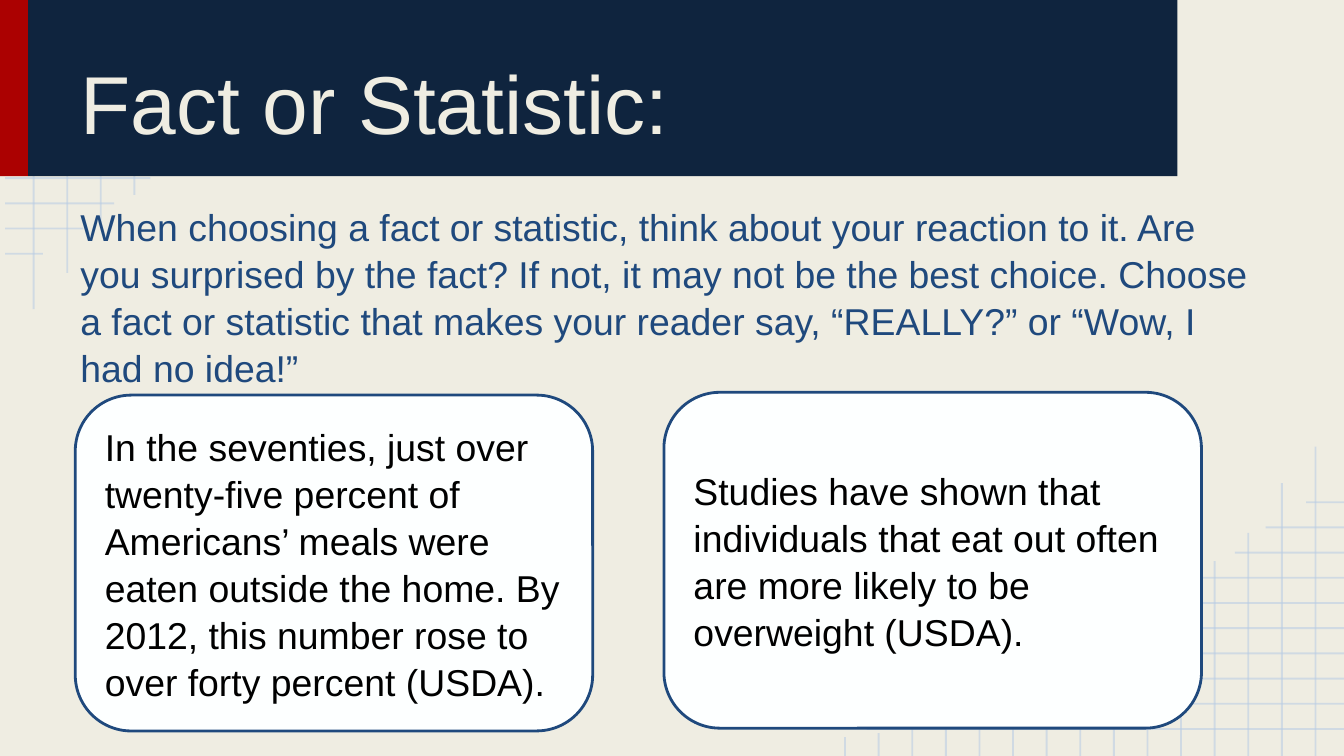
from lxml.etree import SubElement
from pptx import Presentation
from pptx.dml.color import RGBColor
from pptx.enum.shapes import MSO_CONNECTOR, MSO_SHAPE
from pptx.enum.text import MSO_ANCHOR, PP_ALIGN
from pptx.oxml.ns import qn
from pptx.util import Inches, Pt

WIDTH, HEIGHT = Inches(10), Inches(5.625)
COLUMNS, ROWS = 40, 30

# Reach of each mesh line: rows in columns, columns in rows
ROW_ENDS = [14.36, 11.8, 9.64, 8.28, 6.68, 5.48, 4.48, 3.4, 2.48, 1.28]
COLUMN_ENDS = [12.27, 10.83, 8.85, 7.73, 6.88, 6.19, 5.28, 4.59,
               3.84, 3.31, 2.56, 1.76, 1.28, 0.91, 0.75]
MESH_LEFT, MESH_SHIFT = 0.15, 0.07


def color(value):
    return RGBColor.from_string(value)


class SlideBuilder:
    """Places styled elements on a grid of 40 columns by 30 rows."""

    font = "Arial"
    paper, navy, red = "EFEDE2", "0F243E", "AB0101"
    blue, mesh_blue, white, black = "1F497D", "B7CCE4", "FDFFFF", "000000"

    def __init__(self, page):
        self.page = page
        page.background.fill.solid()
        page.background.fill.fore_color.rgb = color(self.paper)

    def place(self, column, row):
        return round(column * WIDTH / COLUMNS), round(row * HEIGHT / ROWS)

    def line(self, start, end):
        connector = self.page.shapes.add_connector(
            MSO_CONNECTOR.STRAIGHT, *self.place(*start), *self.place(*end))
        connector.line.width = Pt(1)
        connector.line.color.rgb = color(self.mesh_blue)
        properties = connector._element.spPr
        tint = properties.find(".//" + qn("a:srgbClr"))
        SubElement(tint, qn("a:alpha"), val="54000")
        SubElement(properties, qn("a:effectLst"))

    def mesh(self, turn):
        """Draw one corner mesh; turn maps its points onto the slide."""
        for number, end in enumerate(ROW_ENDS, 1):
            row = number + MESH_SHIFT
            self.line(turn(MESH_LEFT, row), turn(end, row))
        for number, end in enumerate(COLUMN_ENDS, 1):
            self.line(turn(number, end), turn(number, 0))

    def shape(self, kind, area, fill, outline=None):
        shape = self.page.shapes.add_shape(
            kind, *self.place(*area[:2]), *self.place(*area[2:]))
        shape.shadow.inherit = False
        shape.fill.solid()
        shape.fill.fore_color.rgb = color(fill)
        if outline:
            shape.line.color.rgb = color(outline)
            shape.line.width = Pt(1.5)
        else:
            shape.line.fill.background()
        return shape

    def fill_text(self, box, words, size, tint, anchor, spacing=1.05):
        frame = box.text_frame
        frame.word_wrap = True
        frame.vertical_anchor = anchor
        frame.margin_left = frame.margin_right = Inches(0.1)
        frame.margin_top = frame.margin_bottom = Inches(0.1)
        para = frame.paragraphs[0]
        para.alignment = PP_ALIGN.LEFT
        para.line_spacing = spacing
        span = para.add_run()
        span.text = words
        span.font.name = self.font
        span.font.size = Pt(size)
        span.font.color.rgb = color(tint)

    def text(self, area, *style):
        box = self.page.shapes.add_textbox(
            *self.place(*area[:2]), *self.place(*area[2:]))
        self.fill_text(box, *style)

    def card(self, area, words):
        box = self.shape(MSO_SHAPE.ROUNDED_RECTANGLE, area, self.white, self.blue)
        self.fill_text(box, words, 20, self.black, MSO_ANCHOR.MIDDLE)


def main():
    deck = Presentation()
    deck.slide_width, deck.slide_height = WIDTH, HEIGHT
    builder = SlideBuilder(deck.slides.add_slide(deck.slide_layouts[6]))

    # Corner meshes: the second is the first turned by half a circle
    builder.mesh(lambda column, row: (column, row))
    builder.mesh(lambda column, row: (COLUMNS + MESH_LEFT - column, ROWS - row))

    # Header band
    builder.shape(MSO_SHAPE.RECTANGLE, (0, -0.05, 0.84, 7.04), builder.red)
    builder.shape(MSO_SHAPE.RECTANGLE, (0.84, -0.05, 34.2, 7.04), builder.navy)

    # Title and advice
    builder.text((2, 0.59, 32, 5.92), "Fact or Statistic:",
                 44, builder.paper, MSO_ANCHOR.BOTTOM, 1.0)
    builder.text((2, 7.47, 36, 6.4),
                 "When choosing a fact or statistic, think about your reaction "
                 "to it. Are you surprised by the fact? If not, it may not be "
                 "the best choice. Choose a fact or statistic that makes your "
                 "reader say, “REALLY?” or “Wow, I had no idea!”",
                 20, builder.blue, MSO_ANCHOR.TOP)

    # Example cards
    builder.card((2.24, 15.68, 15.4, 13.33),
                 "In the seventies, just over twenty-five percent of Americans’ "
                 "meals were eaten outside the home. By 2012, this number rose "
                 "to over forty percent (USDA).")
    builder.card((19.76, 15.57, 16, 13.33),
                 "Studies have shown that individuals that eat out often are "
                 "more likely to be overweight (USDA).")

    deck.save("out.pptx")


if __name__ == "__main__":
    main()
